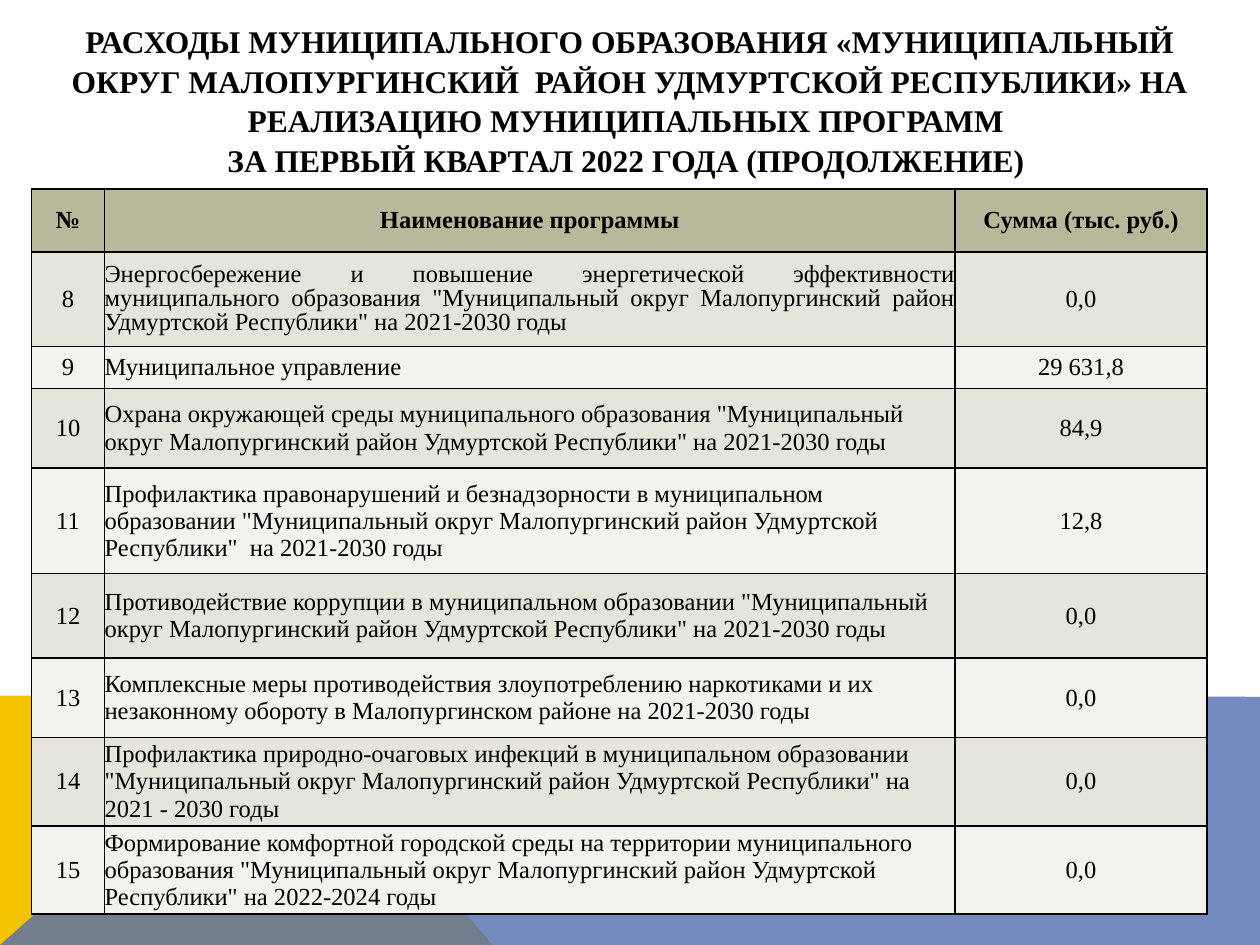
import pptx
import pptx.dml.color
import pptx.enum.text
import pptx.oxml.ns
import pptx.util
from lxml import etree

Inches = pptx.util.Inches
Pt = pptx.util.Pt
RGBColor = pptx.dml.color.RGBColor
PP_ALIGN = pptx.enum.text.PP_ALIGN
MSO_ANCHOR = pptx.enum.text.MSO_ANCHOR
qn = pptx.oxml.ns.qn

BLACK = RGBColor(0x00, 0x00, 0x00)
YELLOW = RGBColor(0xF5, 0xC2, 0x01)
BLUE = RGBColor(0x52, 0x6D, 0xB0)
HEADER_FILL = RGBColor(0xB8, 0xB8, 0x9B)
BAND_FILLS = (RGBColor(0xE5, 0xE5, 0xDC), RGBColor(0xF2, 0xF2, 0xEE))

TITLE = (
    "РАСХОДЫ МУНИЦИПАЛЬНОГО ОБРАЗОВАНИЯ «МУНИЦИПАЛЬНЫЙ ОКРУГ МАЛОПУРГИНСКИЙ  РАЙОН "
    "УДМУРТСКОЙ РЕСПУБЛИКИ» НА РЕАЛИЗАЦИЮ МУНИЦИПАЛЬНЫХ ПРОГРАММ \v"
    "ЗА ПЕРВЫЙ КВАРТАЛ 2022 ГОДА (ПРОДОЛЖЕНИЕ) "
)
HEADER = ("№", "Наименование программы", "Сумма (тыс. руб.)")
DISTRICT = '"Муниципальный округ Малопургинский район Удмуртской Республики"'
FIRST_NUMBER = 8
PROGRAMS = [
    ("Энергосбережение и повышение энергетической эффективности муниципального "
     f"образования {DISTRICT} на 2021-2030 годы", "0,0"),
    ("Муниципальное управление", "29 631,8"),
    (f"Охрана окружающей среды муниципального образования {DISTRICT} на 2021-2030 годы",
     "84,9"),
    ("Профилактика правонарушений и безнадзорности в муниципальном образовании "
     f"{DISTRICT}  на 2021-2030 годы", "12,8"),
    (f"Противодействие коррупции в муниципальном образовании {DISTRICT} "
     "на 2021-2030 годы", "0,0"),
    ("Комплексные меры противодействия злоупотреблению наркотиками и их незаконному "
     "обороту в Малопургинском районе на 2021-2030 годы", "0,0"),
    ("Профилактика природно-очаговых инфекций в муниципальном образовании "
     f"{DISTRICT} на 2021 - 2030 годы", "0,0"),
    ("Формирование комфортной городской среды на территории муниципального образования "
     f"{DISTRICT} на 2022-2024 годы", "0,0"),
]
COLUMN_WIDTHS = (0.58, 6.75, 2)
ROW_HEIGHTS = (0.5, 0.75, 0.32, 0.63, 0.84, 0.67, 0.63, 0.67, 0.67)


class SlideBuilder:
    font_name = "Times New Roman"
    title_size = Pt(18)
    table_size = Pt(14)
    border_width = Pt(1)

    def __init__(self, slide):
        self.slide = slide

    def format_paragraph(self, paragraph, size, bold, align):
        paragraph.alignment = align
        for run in paragraph.runs:
            run.font.name = self.font_name
            run.font.size = size
            run.font.bold = bold
            run.font.color.rgb = BLACK

    def polygon(self, points, color, opacity=100):
        corners = [(Inches(x), Inches(y)) for x, y in points]
        builder = self.slide.shapes.build_freeform(*corners[0])
        builder.add_line_segments(corners[1:], close=True)
        shape = builder.convert_to_shape()
        shape.shadow.inherit = False
        shape.line.fill.background()
        shape.fill.solid()
        shape.fill.fore_color.rgb = color
        if opacity < 100:
            srgb = shape.fill._xPr.find(".//" + qn("a:srgbClr"))
            etree.SubElement(srgb, qn("a:alpha"), val=str(opacity * 1000))

    def title(self, text, left, top, width, height):
        box = self.slide.shapes.add_textbox(
            Inches(left), Inches(top), Inches(width), Inches(height))
        frame = box.text_frame
        frame.word_wrap = True
        frame.vertical_anchor = MSO_ANCHOR.MIDDLE
        frame.text = text
        heading = frame.paragraphs[0]
        heading.line_spacing = 1.05
        self.format_paragraph(heading, self.title_size, True, PP_ALIGN.CENTER)

    def cell(self, cell, text, fill, bold=False, align=PP_ALIGN.CENTER):
        cell.text_frame.text = text
        cell.vertical_anchor = MSO_ANCHOR.MIDDLE
        self.format_paragraph(cell.text_frame.paragraphs[0], self.table_size, bold, align)
        properties = cell._tc.get_or_add_tcPr()
        for side in ("a:lnL", "a:lnR", "a:lnT", "a:lnB"):
            border = etree.SubElement(properties, qn(side), w=str(self.border_width))
            solid = etree.SubElement(border, qn("a:solidFill"))
            etree.SubElement(solid, qn("a:srgbClr"), val=str(BLACK))
        cell.fill.solid()
        cell.fill.fore_color.rgb = fill

    def program_name(self, cell, text, fill, align):
        """Fill a name cell, whose text runs right up to the borders."""
        self.cell(cell, text, fill, align=align)
        cell.margin_left = cell.margin_right = cell.margin_top = cell.margin_bottom = 0

    def program_table(self, left, top):
        table = self.slide.shapes.add_table(
            len(ROW_HEIGHTS), len(COLUMN_WIDTHS), Inches(left), Inches(top),
            Inches(sum(COLUMN_WIDTHS)), Inches(sum(ROW_HEIGHTS))).table
        for column, width in zip(table.columns, COLUMN_WIDTHS):
            column.width = Inches(width)
        for row, height in zip(table.rows, ROW_HEIGHTS):
            row.height = Inches(height)
        for index, label in enumerate(HEADER):
            self.cell(table.cell(0, index), label, HEADER_FILL, bold=True)
        for index, (name, amount) in enumerate(PROGRAMS):
            fill = BAND_FILLS[index % 2]
            row = index + 1
            align = PP_ALIGN.JUSTIFY if index == 0 else PP_ALIGN.LEFT
            self.cell(table.cell(row, 0), str(FIRST_NUMBER + index), fill)
            self.program_name(table.cell(row, 1), name, fill, align)
            self.cell(table.cell(row, 2), amount, fill)
        table.cell(1, 1).text_frame.paragraphs[0].line_spacing = 0.9


def main():
    presentation = pptx.Presentation()
    presentation.slide_width = Inches(10)
    presentation.slide_height = Inches(7.5)
    builder = SlideBuilder(presentation.slides.add_slide(presentation.slide_layouts[6]))
    builder.polygon([(0, 7.5), (0, 5.52), (2.23, 5.52), (3.91, 7.5)], YELLOW)
    builder.polygon([(0, 7.5), (2.23, 5.52), (10, 5.53), (10, 7.5)], BLUE, opacity=80)
    builder.title(TITLE, 0.25, 0.25, 9.5, 1.08)
    builder.program_table(0.25, 1.5)
    presentation.save("out.pptx")


if __name__ == "__main__":
    main()
